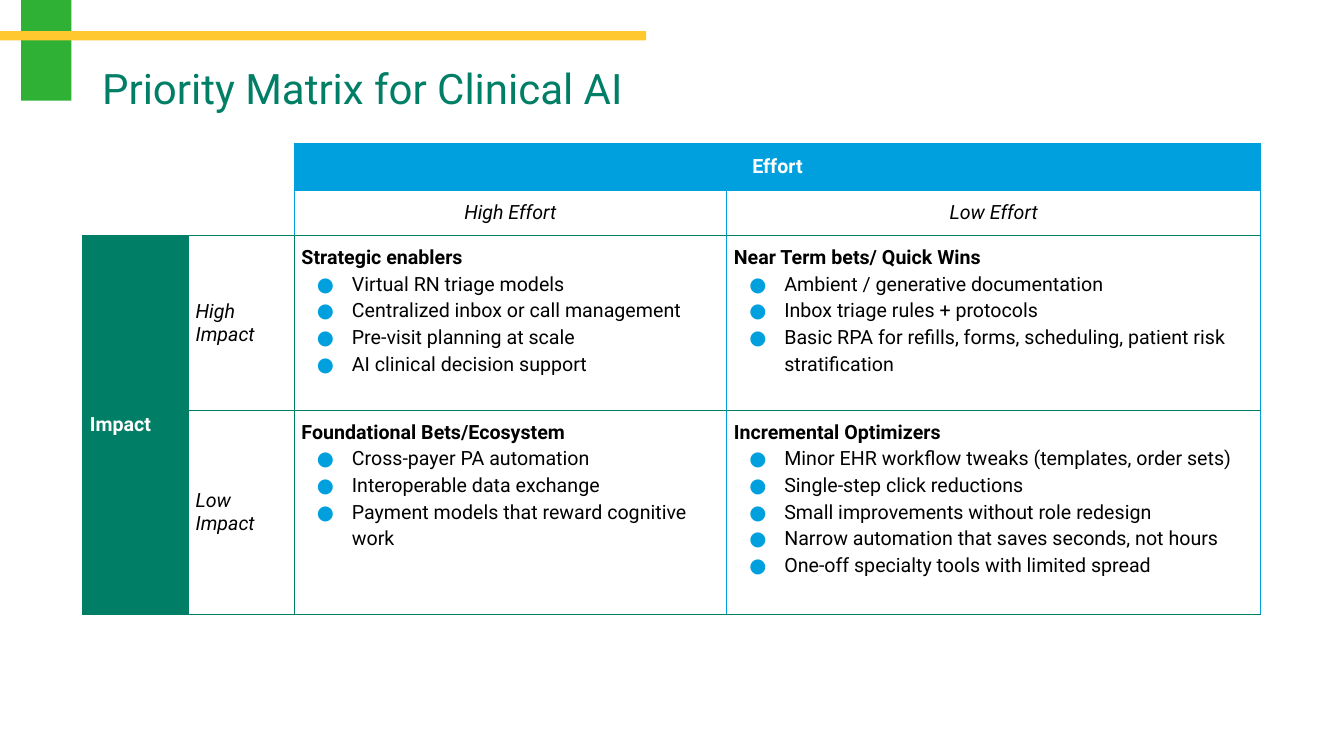
from lxml import etree
from pptx import Presentation
from pptx import util as u
from pptx.dml.color import RGBColor
from pptx.enum import shapes, text
from pptx.oxml.ns import qn

COLORS = {"blue": "00A0DE", "teal": "007E66", "green": "2EB135",
          "yellow": "FFC82E", "white": "FFFFFF", "black": "000000"}
QUADRANTS = {
    (2, 2): ("Strategic enablers", [
        "Virtual RN triage models",
        "Centralized inbox or call management",
        "Pre-visit planning at scale",
        "AI clinical decision support"]),
    (2, 3): ("Near Term bets/ Quick Wins", [
        "Ambient / generative documentation",
        "Inbox triage rules + protocols",
        "Basic RPA for refills, forms, scheduling, patient risk stratification"]),
    (3, 2): ("Foundational Bets/Ecosystem", [
        "Cross-payer PA automation",
        "Interoperable data exchange",
        "Payment models that reward cognitive work"]),
    (3, 3): ("Incremental Optimizers", [
        "Minor EHR workflow tweaks (templates, order sets)",
        "Single-step click reductions",
        "Small improvements without role redesign",
        "Narrow automation that saves seconds, not hours",
        "One-off specialty tools with limited spread"]),
}
LABELS = {(1, 2): "High Effort", (1, 3): "Low Effort",
          (2, 1): "High Impact", (3, 1): "Low Impact"}


def rgb(name):
    return RGBColor.from_string(COLORS[name])


class Deck:
    font = "Roboto"
    size = 14
    inset = u.Pt(5.2)

    def __init__(self, prs):
        self.s = prs.slides.add_slide(prs.slide_layouts[6])

    def bar(self, x, y, w, h, color):
        sp = self.s.shapes.add_shape(shapes.MSO_SHAPE.RECTANGLE,
                                     u.Pt(x), u.Pt(y), u.Pt(w), u.Pt(h))
        sp.shadow.inherit = False
        sp.fill.solid()
        sp.fill.fore_color.rgb = rgb(color)
        sp.line.fill.background()

    def run(self, p, words, color="black", size=None, bold=False, italic=False):
        r = p.add_run()
        r.text = words
        f = r.font
        f.name, f.size, f.bold, f.italic = self.font, u.Pt(size or self.size), bold, italic
        f.color.rgb = rgb(color)

    def title(self, x, y, w, h, words):
        tf = self.s.shapes.add_textbox(u.Pt(x), u.Pt(y), u.Pt(w), u.Pt(h)).text_frame
        tf.word_wrap = True
        tf.vertical_anchor = text.MSO_ANCHOR.MIDDLE
        p = tf.paragraphs[0]
        p.line_spacing = 0.9
        self.run(p, words, "teal", 30)

    def table(self, x, y, cols, rows):
        t = self.s.shapes.add_table(len(rows), len(cols), u.Pt(x), u.Pt(y),
                                    u.Pt(sum(cols)), u.Pt(sum(rows))).table
        t.first_row = t.horz_banding = False
        for col, w in zip(t.columns, cols):
            col.width = u.Pt(w)
        for row, h in zip(t.rows, rows):
            row.height = u.Pt(h)
        return t

    def cell(self, cell, fill, borders):
        cell.margin_left = cell.margin_right = self.inset
        cell.margin_top = cell.margin_bottom = self.inset
        if fill:
            cell.fill.solid()
            cell.fill.fore_color.rgb = rgb(fill)
        else:
            cell.fill.background()
        tcPr = cell._tc.get_or_add_tcPr()
        for i, (side, color) in enumerate(zip("LRTB", borders)):
            ln = etree.Element(qn(f"a:ln{side}"), w=str(u.Pt(0.75)))
            if color:
                solid = etree.SubElement(ln, qn("a:solidFill"))
                etree.SubElement(solid, qn("a:srgbClr"), val=COLORS[color])
            else:
                etree.SubElement(ln, qn("a:noFill"))
            tcPr.insert(i, ln)

    def label(self, cell, words, center=False, **style):
        cell.vertical_anchor = text.MSO_ANCHOR.MIDDLE
        p = cell.text_frame.paragraphs[0]
        if center:
            p.alignment = text.PP_ALIGN.CENTER
        self.run(p, words, **style)

    def bullets(self, cell, heading, items):
        tf = cell.text_frame
        p = tf.paragraphs[0]
        p.line_spacing = 1.15
        self.run(p, heading, bold=True)
        for item in items:
            p = tf.add_paragraph()
            p.line_spacing = 1.15
            pPr = p._p.get_or_add_pPr()
            pPr.set("marL", str(u.Pt(36)))
            pPr.set("indent", str(u.Pt(-25)))
            clr = etree.SubElement(pPr, qn("a:buClr"))
            etree.SubElement(clr, qn("a:srgbClr"), val=COLORS["blue"])
            etree.SubElement(pPr, qn("a:buFont"), typeface=self.font)
            etree.SubElement(pPr, qn("a:buChar"), char="●")
            self.run(p, item)


def borders(r, c):
    if r < 2 and c < 2:
        return (None, "blue" if c else None, None, "teal" if r else None)
    return ("blue" if c == 3 or r < 2 else "teal",
            "blue" if c >= 2 else "teal",
            "blue" if r < 2 else "teal",
            "blue" if r == 0 else "teal")


def fill(r, c):
    if r == 0 and c >= 2:
        return "blue"
    return "teal" if r >= 2 and c == 0 else None


def main():
    prs = Presentation()
    prs.slide_width, prs.slide_height = u.Pt(960), u.Pt(540)
    d = Deck(prs)
    d.bar(15.1, 0, 36, 72, "green")
    d.bar(0, 22.3, 461.5, 6.5, "yellow")

    t = d.table(59, 102.2, [75.6, 75.6, 308.9, 381.6], [33.8, 30.2, 124.6, 146.2])
    for r in range(4):
        for c in range(4):
            d.cell(t.cell(r, c), fill(r, c), borders(r, c))
    for first, last in [((0, 0), (1, 1)), ((0, 2), (0, 3)), ((2, 0), (3, 0))]:
        t.cell(*first).merge(t.cell(*last))

    d.label(t.cell(0, 2), "Effort", center=True, color="white", bold=True)
    d.label(t.cell(2, 0), "Impact", color="white", bold=True)
    for (r, c), words in LABELS.items():
        d.label(t.cell(r, c), words, center=r == 1, italic=True)
    for pos, (heading, items) in QUADRANTS.items():
        d.bullets(t.cell(*pos), heading, items)

    d.title(65.9, 28.8, 537, 72, "Priority Matrix for Clinical AI")
    prs.save("out.pptx")


if __name__ == "__main__":
    main()
